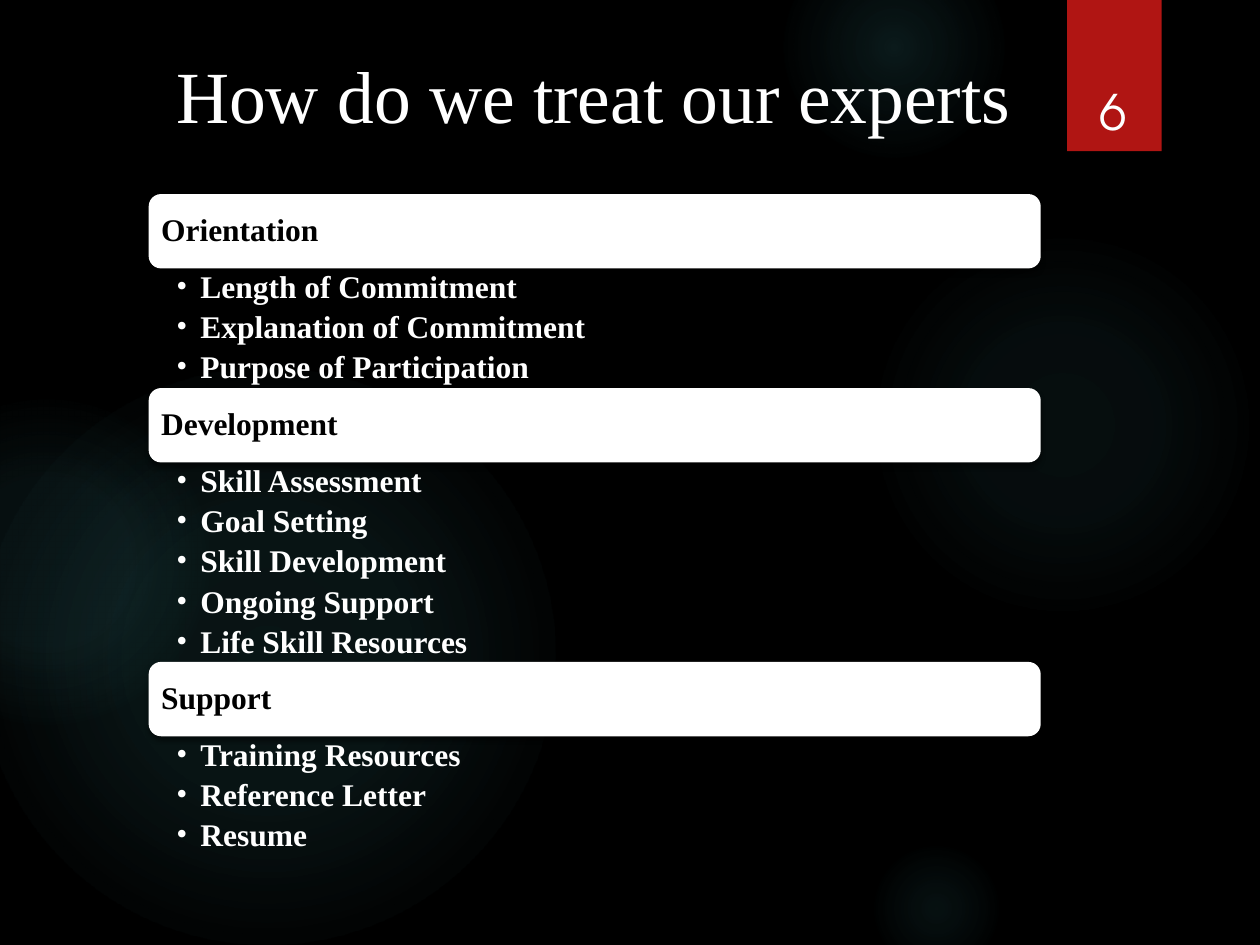
from pptx import Presentation
from pptx import util as u
from pptx.dml.color import RGBColor
from pptx.enum import shapes, text
from pptx.oxml import parse_xml
from pptx.oxml.ns import nsdecls

BLACK = RGBColor(0x00, 0x00, 0x00)
WHITE = RGBColor(0xFF, 0xFF, 0xFF)
RED = RGBColor(0xB0, 0x15, 0x13)
TEAL = RGBColor(0x50, 0xB9, 0xC1)

SERIF = "Times New Roman"
TITLE_FONT = {"name": SERIF, "size": u.Pt(42), "bold": False}
BODY_FONT = {"name": SERIF, "size": u.Pt(18), "bold": True}
NUMBER_FONT = {"name": "TeX Gyre Adventor", "size": u.Pt(28)}

GLOWS = [
    (6.89, 1.83, 3.08, ((0, 7), (36, 6), (69, 0))),
    (6.22, -0.5, 1.75, ((0, 14), (36, 7), (73, 0))),
    (6.89, 6.67, 1.08, ((0, 9), (36, 5), (66, 0))),
    (-0.17, 2.92, 4.58, ((0, 11), (36, 10), (75, 0))),
    (-0.92, 3.17, 2.58, ((0, 8), (36, 8), (72, 0))),
]
SECTIONS = {
    "Orientation": ["Length of Commitment", "Explanation of Commitment", "Purpose of Participation"],
    "Development": ["Skill Assessment", "Goal Setting", "Skill Development",
                    "Ongoing Support", "Life Skill Resources"],
    "Support": ["Training Resources", "Reference Letter", "Resume"],
}
HEADING_HEIGHT = 0.59
ITEM_HEIGHT = 0.95 / 3


def set_values(target, values):
    for name, value in values.items():
        setattr(target, name, value)


def write_text(shape, lines, font, color, frame_format, paragraph_format):
    frame = shape.text_frame
    set_values(frame, {"word_wrap": True, **frame_format})
    frame.text = "\n".join(lines)
    for paragraph in frame.paragraphs:
        set_values(paragraph, paragraph_format)
        set_values(paragraph.runs[0].font, font)
        paragraph.runs[0].font.color.rgb = color
    return frame.paragraphs


def add_block(slide, kind, box, color):
    shape = slide.shapes.add_shape(kind, *map(u.Inches, box))
    shape.fill.solid()
    shape.fill.fore_color.rgb = color
    shape.line.fill.background()
    shape.shadow.inherit = False
    return shape


def add_shadow(shape):
    effects = shape.element.spPr.find("{*}effectLst")
    effects.append(parse_xml(
        f'<a:outerShdw {nsdecls("a")} blurRad="{u.Pt(3)}" dist="{u.Pt(2)}" dir="5400000" '
        f'rotWithShape="0"><a:srgbClr val="{BLACK}"><a:alpha val="45000"/></a:srgbClr></a:outerShdw>'))


def add_glow(slide, left, top, size, stops):
    glow = add_block(slide, shapes.MSO_SHAPE.OVAL, (left, top, size, size), TEAL)
    stop_xml = "".join(
        f'<a:gs pos="{position * 1000}"><a:srgbClr val="{TEAL}">'
        f'<a:alpha val="{alpha * 1000}"/></a:srgbClr></a:gs>' for position, alpha in stops)
    properties = glow.element.spPr
    properties.replace(properties.find("{*}solidFill"), parse_xml(
        f'<a:gradFill {nsdecls("a")} rotWithShape="1"><a:gsLst>{stop_xml}</a:gsLst>'
        '<a:path path="circle"><a:fillToRect l="50000" t="50000" r="50000" b="50000"/></a:path>'
        '</a:gradFill>'))
    slide.shapes.title.element.addprevious(glow.element)


def place_title(slide, left, top, width, height):
    title = slide.shapes.title
    box = map(u.Inches, (left, top, width, height))
    set_values(title, dict(zip(("left", "top", "width", "height"), box)))
    write_text(title, ["How do we treat our experts"], TITLE_FONT, WHITE,
               {"vertical_anchor": text.MSO_ANCHOR.MIDDLE, "auto_size": text.MSO_AUTO_SIZE.NONE},
               {"alignment": text.PP_ALIGN.CENTER})


def add_page_tab(slide, left, top, width, height):
    add_shadow(add_block(slide, shapes.MSO_SHAPE.RECTANGLE, (left, top, width, height), RED))
    number = slide.shapes.add_textbox(*map(u.Inches, (left + 0.02, top + 0.32, 0.69, 0.84)))
    write_text(number, ["6"], NUMBER_FONT, WHITE,
               {"vertical_anchor": text.MSO_ANCHOR.BOTTOM}, {"alignment": text.PP_ALIGN.CENTER})


def add_heading(slide, heading, box):
    bar = add_block(slide, shapes.MSO_SHAPE.ROUNDED_RECTANGLE, box, WHITE)
    add_shadow(bar)
    write_text(bar, [heading], BODY_FONT, BLACK,
               {"margin_left": u.Inches(0.07), "vertical_anchor": text.MSO_ANCHOR.MIDDLE},
               {"alignment": text.PP_ALIGN.LEFT, "line_spacing": 0.9})


def add_bullets(slide, items, box):
    bullets = slide.shapes.add_textbox(*map(u.Inches, box))
    margins = {"margin_left": 0.22, "margin_top": 0.03, "margin_right": 0.14, "margin_bottom": 0.03}
    paragraphs = write_text(bullets, items, BODY_FONT, WHITE,
                            {side: u.Inches(size) for side, size in margins.items()},
                            {"level": 1, "line_spacing": u.Pt(18.6), "space_after": u.Pt(4.4)})
    indent = u.Inches(0.19)
    for paragraph in paragraphs:
        properties = paragraph._p.get_or_add_pPr()
        properties.set("marL", str(indent))
        properties.set("indent", str(-indent))
        properties.append(parse_xml(f'<a:buFont {nsdecls("a")} typeface="{SERIF}"/>'))
        properties.append(parse_xml(f'<a:buChar {nsdecls("a")} char="•"/>'))


def add_sections(slide, left, top, width):
    for heading, items in SECTIONS.items():
        add_heading(slide, heading, (left, top, width, HEADING_HEIGHT))
        top += HEADING_HEIGHT
        list_height = ITEM_HEIGHT * len(items)
        add_bullets(slide, items, (left, top, width, list_height))
        top += list_height


def main():
    presentation = Presentation()
    set_values(presentation, {"slide_width": u.Inches(10), "slide_height": u.Inches(7.5)})
    slide = presentation.slides.add_slide(presentation.slide_layouts[5])
    slide.background.fill.solid()
    slide.background.fill.fore_color.rgb = BLACK
    for glow in GLOWS:
        add_glow(slide, *glow)
    place_title(slide, 0.71, 0.36, 8, 0.77)
    add_page_tab(slide, 8.47, 0, 0.75, 1.2)
    add_sections(slide, 1.18, 1.54, 7.08)
    presentation.save("out.pptx")


if __name__ == "__main__":
    main()
